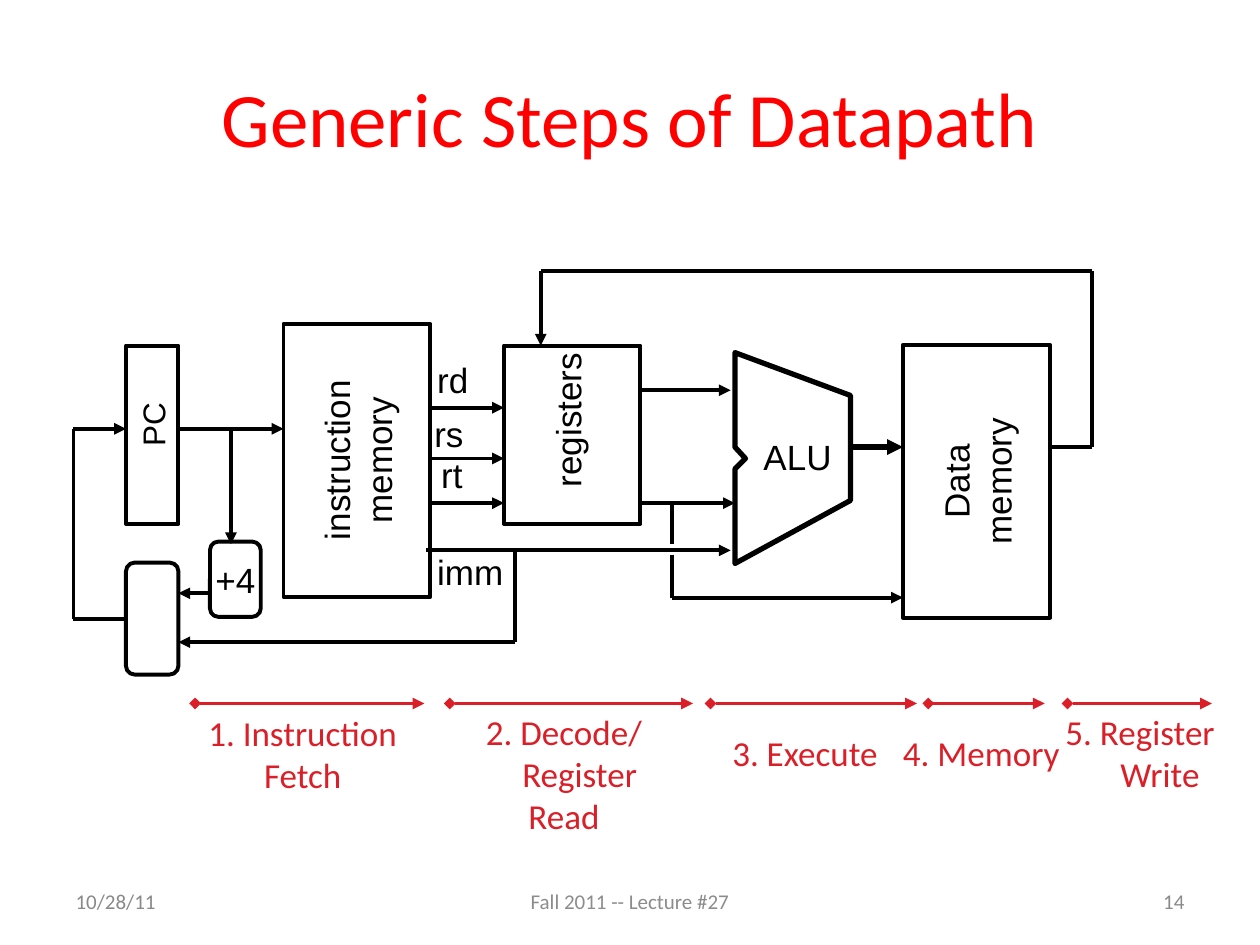
from dataclasses import dataclass
from itertools import pairwise
from typing import NamedTuple

from lxml.etree import SubElement
from pptx import Presentation
from pptx.dml.color import RGBColor
from pptx.enum.shapes import MSO_CONNECTOR as Link, MSO_SHAPE as Form
from pptx.enum.text import MSO_ANCHOR as Anchor, PP_ALIGN as Align
from pptx.oxml.ns import qn
from pptx.util import Pt

BLACK = RGBColor(0, 0, 0)
WHITE = RGBColor(255, 255, 255)
RED = RGBColor(255, 0, 0)
CRIMSON = RGBColor(0xDA, 0x1F, 0x28)
GREY = RGBColor(0x89, 0x89, 0x89)
PALE = RGBColor(0x8C, 0x8C, 0x8C)
THIN, THICK = 2.25, 3
LEFT_SIDE = 1

PC_Y, ALU_Y, LOW_Y, IMM_Y, SUM_Y = 245, 255.5, 287.5, 314.5, 353.5
STEP_Y = 402


class Frame(NamedTuple):
    left: float
    top: float
    width: float
    height: float


@dataclass
class Box:
    name: str
    frame: Frame
    text: str = ""
    spin: int = 0
    form: Form = Form.RECTANGLE


@dataclass
class Wire:
    points: list
    tip: bool = True
    width: float = THIN
    start: str = ""


@dataclass
class Label:
    text: str
    frame: Frame
    spin: int = 0
    size: float = 20


@dataclass
class Step:
    text: str
    frame: Frame
    start: float
    end: float
    indents: tuple = ()


BOXES = [
    Box("pc", Frame(72, 197.5, 30, 102)),
    Box("fetch", Frame(126, 221, 156, 84), "instruction\nmemory", 270),
    Box("plus", Frame(120, 309.5, 29, 43), "+4", form=Form.ROUNDED_RECTANGLE),
    Box("regs", Frame(288, 197.5, 78, 102)),
    Box("data", Frame(480, 233, 156, 84), "Data\nmemory", 270),
    Box("next", Frame(72, 321.5, 30, 64), form=Form.ROUNDED_RECTANGLE),
]

ALU = [(420, 201.5), (486, 226), (486, 286), (420, 322),
       (420, 268), (426, 262), (420, 255.5)]

WIRES = [
    Wire([(102, PC_Y), (162, PC_Y)]),
    *[Wire([(246, y), (288, y)]) for y in (233, 262, LOW_Y)],
    Wire([(366, 223), (417.5, 223)]),
    Wire([(366, LOW_Y), (420, LOW_Y)]),
    Wire([(243.5, IMM_Y), (417.5, IMM_Y)]),
    Wire([(486, ALU_Y), (516, ALU_Y)], width=THICK),
    Wire([(384, LOW_Y), (384, 311)], tip=False),
    Wire([(384, 317), (384, 341.5), (516, 341.5)]),
    Wire([(600, ALU_Y), (624, ALU_Y), (624, 155), (309, 155), (309, 197.5)]),
    Wire([(132, PC_Y), (132, 311)]),
    Wire([(120, 339), (102, 339)]),
    Wire([(294.5, IMM_Y), (294.5, 367), (102, 367)]),
    Wire([(72, SUM_Y), (42, SUM_Y), (42, PC_Y), (72, PC_Y)], start="next"),
]

LABELS = [
    Label("rd", Frame(242.5, 201.5, 32.5, 31)),
    Label("rs", Frame(241, 232, 31, 31)),
    Label("rt", Frame(245, 255.5, 26.5, 31)),
    Label("imm", Frame(242.5, 311, 52.5, 31)),
    Label("ALU", Frame(429, 245.5, 53.5, 31)),
    Label("registers", Frame(278.5, 224.5, 91.5, 31), 270),
    Label("PC", Frame(67.5, 228, 39.5, 29), 270, 18),
]

STEPS = [
    Step("1. Instruction\nFetch", Frame(111.5, 403, 123, 55.5), 111.5, 242.5),
    Step("2. Decode/\nRegister\nRead", Frame(270, STEP_Y, 104.5, 80),
         257, 396, (0, 18, 0)),
    Step("3. Execute", Frame(411, 414, 98, 31.5), 406, 524),
    Step("4. Memory", Frame(508.5, 414, 104.5, 31.5), 530.5, 597),
    Step("5. Register\nWrite", Frame(601, STEP_Y, 101, 55.5),
         610, 692.5, (0, 22.6)),
]


def place(frame: Frame) -> list:
    return [Pt(v) for v in frame]


def write(shape, text: str, *, size: float = 20, font: str = "Arial",
          color: RGBColor = BLACK, align: Align = Align.CENTER,
          wrap: bool = False, indents: tuple = ()) -> None:
    body = shape.text_frame
    body.word_wrap = wrap
    body.vertical_anchor = Anchor.MIDDLE
    body.margin_left = body.margin_right = 0
    body.margin_top = body.margin_bottom = 0
    body.text = text
    for i, para in enumerate(body.paragraphs):
        para.alignment = align
        if indents and indents[i]:
            para._p.get_or_add_pPr().set("marL", str(Pt(indents[i])))
        style = para.runs[0].font
        style.size, style.name = Pt(size), font
        style.color.rgb = color


def note(slide, text: str, frame: Frame, spin: int = 0, **style) -> None:
    shape = slide.shapes.add_textbox(*place(frame))
    shape.rotation = spin
    write(shape, text, **style)


def ink(shape, width: float) -> None:
    shape.shadow.inherit = False
    shape.fill.solid()
    shape.fill.fore_color.rgb = WHITE
    shape.line.color.rgb = BLACK
    shape.line.width = Pt(width)


def block(slide, box: Box):
    shape = slide.shapes.add_shape(box.form, *place(box.frame))
    shape.rotation = box.spin
    ink(shape, THIN)
    if box.text:
        write(shape, box.text)
    return shape


def line(slide, start: tuple, end: tuple, *, color: RGBColor = BLACK,
         width: float = THIN, head: str = "", tail: str = ""):
    link = slide.shapes.add_connector(
        Link.STRAIGHT, *[Pt(v) for v in (*start, *end)])
    link.line.color.rgb = color
    link.line.width = Pt(width)
    stroke = link.line._get_or_add_ln()
    for tag, kind in (("a:headEnd", head), ("a:tailEnd", tail)):
        if kind:
            SubElement(stroke, qn(tag)).set("type", kind)
    SubElement(link._element.spPr, qn("a:effectLst"))
    return link


def route(slide, wire: Wire, shapes: dict) -> None:
    legs = list(pairwise(wire.points))
    for i, (start, end) in enumerate(legs):
        last = i == len(legs) - 1
        link = line(slide, start, end, width=wire.width,
                    tail="triangle" if last and wire.tip else "")
        if i == 0 and wire.start:
            link.begin_connect(shapes[wire.start], LEFT_SIDE)


def main() -> None:
    deck = Presentation()
    deck.slide_width, deck.slide_height = Pt(720), Pt(540)
    slide = deck.slides.add_slide(deck.slide_layouts[6])
    note(slide, "Generic Steps of Datapath", Frame(36, 21.6, 648, 90),
         size=44, font="Calibri", color=RED, wrap=True)
    shapes = {box.name: block(slide, box) for box in BOXES}
    pen = slide.shapes.build_freeform(*[Pt(v) for v in ALU[0]])
    pen.add_line_segments([(Pt(x), Pt(y)) for x, y in ALU[1:]], close=True)
    ink(pen.convert_to_shape(), THICK)
    for wire in WIRES:
        route(slide, wire, shapes)
    for item in LABELS:
        note(slide, item.text, item.frame, item.spin, size=item.size)
    for step in STEPS:
        note(slide, step.text, step.frame, font="Calibri", color=CRIMSON,
             indents=step.indents)
        line(slide, (step.start, STEP_Y), (step.end, STEP_Y), color=CRIMSON,
             head="diamond", tail="triangle")
    for text, left, width, align, color in (
            ("10/28/11", 43.2, 153.6, Align.LEFT, GREY),
            ("Fall 2011 -- Lecture #27", 246, 228, Align.CENTER, PALE),
            ("14", 523.2, 153.6, Align.RIGHT, GREY)):
        note(slide, text, Frame(left, 500.5, width, 28.75), size=12,
             font="Calibri", color=color, align=align, wrap=True)
    deck.save("out.pptx")


if __name__ == "__main__":
    main()
